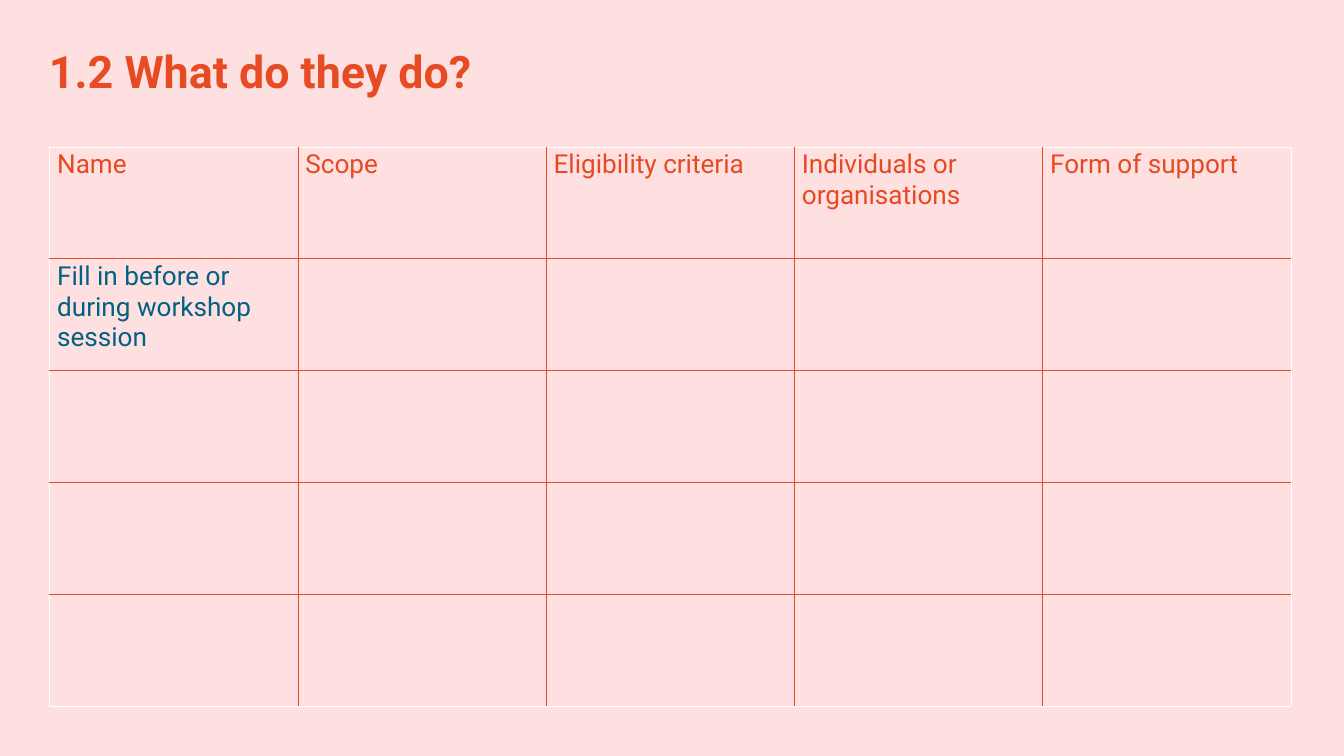
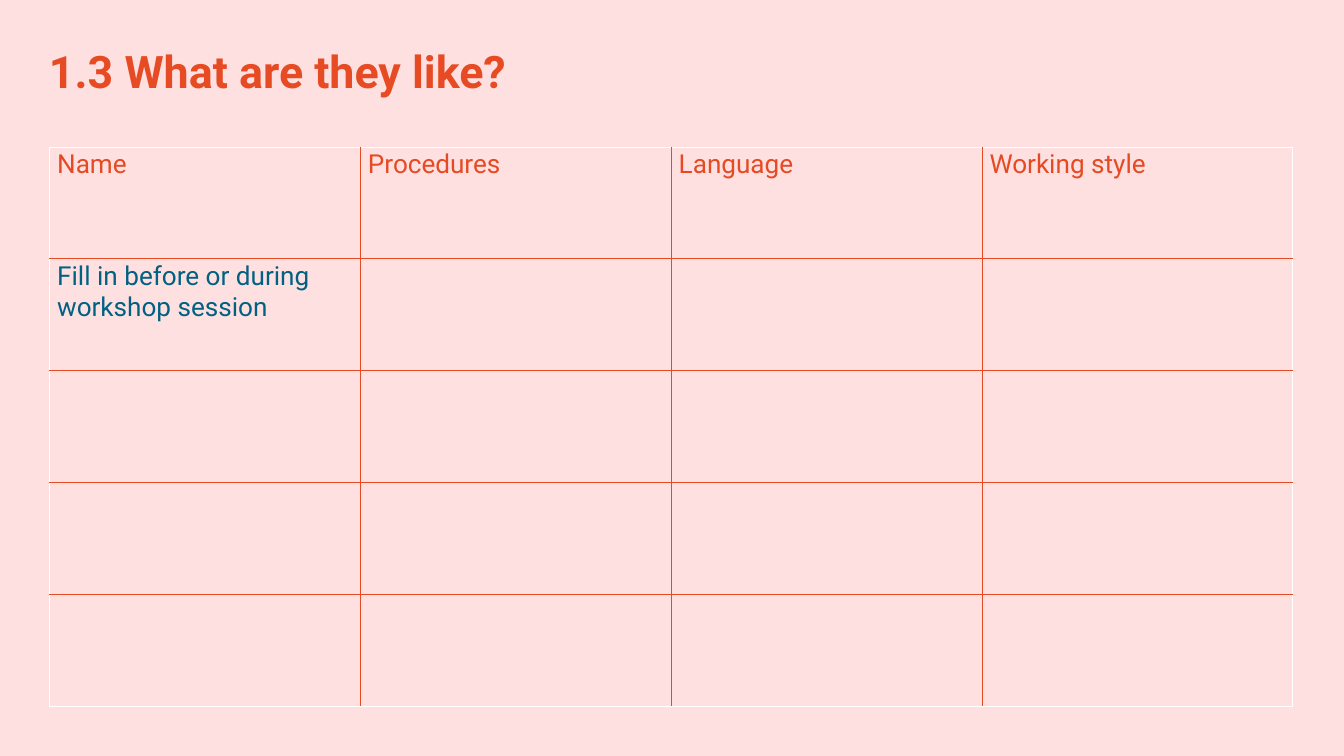
from dataclasses import dataclass

from lxml import etree
from pptx import Presentation
from pptx.dml.color import RGBColor
from pptx.enum.text import MSO_ANCHOR, MSO_AUTO_SIZE
from pptx.oxml.ns import qn
from pptx.util import Pt

TOP = MSO_ANCHOR.TOP
GROW = MSO_AUTO_SIZE.SHAPE_TO_FIT_TEXT

FONT = "Roboto"
PINK = "FFE0E1"
ORANGE = "E64B23"
HEADING_ORANGE = "E64A22"
BLUE = "006182"

TABLE_LEFT, TABLE_TOP = 53.3, 157.5
ROW_COUNT, ROW_HEIGHT = 5, 119.8
RULE_WIDTH = 0.85
CELL_MARGIN, CELL_INDENT = 3, 5
PROMPT = "Fill in before or during workshop session"


@dataclass
class Worksheet:
    title: str
    headings: list[str]
    column_width: float


WORKSHEETS = [
    Worksheet(
        "1.2 What do they do?",
        ["Name", "Scope", "Eligibility criteria",
         "Individuals or organisations", "Form of support"],
        266,
    ),
    Worksheet(
        "1.3 What are they like?",
        ["Name", "Procedures", "Language", "Working style"],
        333,
    ),
]


def color(value: str) -> RGBColor:
    return RGBColor.from_string(value)


def write(frame, text: str, *, size: float, fill: str, bold: bool = False,
          line_height: float | None = None, indent: float = 0) -> None:
    """Fill the first paragraph of a text frame with one formatted span."""
    para = frame.paragraphs[0]
    if line_height:
        para.line_spacing = Pt(line_height)
    if indent:
        properties = para._p.get_or_add_pPr()
        properties.set("marL", str(Pt(indent)))
        properties.set("indent", "0")
    span = para.add_run()
    span.text = text
    span.font.name = FONT
    span.font.size = Pt(size)
    span.font.bold = bold
    span.font.color.rgb = color(fill)


def add_title(page, text: str) -> None:
    box = page.shapes.add_textbox(Pt(52.5), Pt(48), Pt(1334), Pt(56))
    frame = box.text_frame
    frame.word_wrap = True
    frame.auto_size = GROW
    frame.margin_left = frame.margin_right = 0
    frame.margin_top = frame.margin_bottom = 0
    write(frame, text, size=48, fill=ORANGE, bold=True, line_height=57)


def add_rule(cell, side: str) -> None:
    """Draw one cell border; side is L, R, T or B."""
    properties = cell._tc.get_or_add_tcPr()
    line = etree.SubElement(properties, qn(f"a:ln{side}"), w=str(Pt(RULE_WIDTH)))
    solid = etree.SubElement(line, qn("a:solidFill"))
    etree.SubElement(solid, qn("a:srgbClr"), val=ORANGE)


def format_cell(cell, inner_sides: dict[str, bool]) -> None:
    cell.margin_left = cell.margin_right = Pt(CELL_MARGIN)
    cell.margin_top = cell.margin_bottom = Pt(CELL_MARGIN)
    cell.vertical_anchor = TOP
    for side, is_inner in inner_sides.items():
        if is_inner:
            add_rule(cell, side)
    cell.fill.background()


def add_grid(page, sheet: Worksheet) -> None:
    """Add the table with orange rules inside and the style's white outer edge."""
    column_count = len(sheet.headings)
    table = page.shapes.add_table(
        ROW_COUNT, column_count, Pt(TABLE_LEFT), Pt(TABLE_TOP),
        Pt(sheet.column_width * column_count), Pt(ROW_HEIGHT * ROW_COUNT),
    ).table
    table.first_row = False
    table.horz_banding = False
    for column in table.columns:
        column.width = Pt(sheet.column_width)
    for row_index, row in enumerate(table.rows):
        row.height = Pt(ROW_HEIGHT)
        for column_index, cell in enumerate(row.cells):
            format_cell(cell, {
                "L": column_index > 0,
                "R": column_index < column_count - 1,
                "T": row_index > 0,
                "B": row_index < ROW_COUNT - 1,
            })
    for column_index, heading in enumerate(sheet.headings):
        write(table.cell(0, column_index).text_frame, heading,
              size=28, fill=HEADING_ORANGE, indent=CELL_INDENT)
    write(table.cell(1, 0).text_frame, PROMPT,
          size=28, fill=BLUE, indent=CELL_INDENT)


def main() -> None:
    deck = Presentation()
    deck.slide_width, deck.slide_height = Pt(1440), Pt(810)
    blank = deck.slide_layouts[6]
    for sheet in WORKSHEETS:
        page = deck.slides.add_slide(blank)
        page.background.fill.solid()
        page.background.fill.fore_color.rgb = color(PINK)
        add_title(page, sheet.title)
        add_grid(page, sheet)
    deck.save("out.pptx")


if __name__ == "__main__":
    main()
